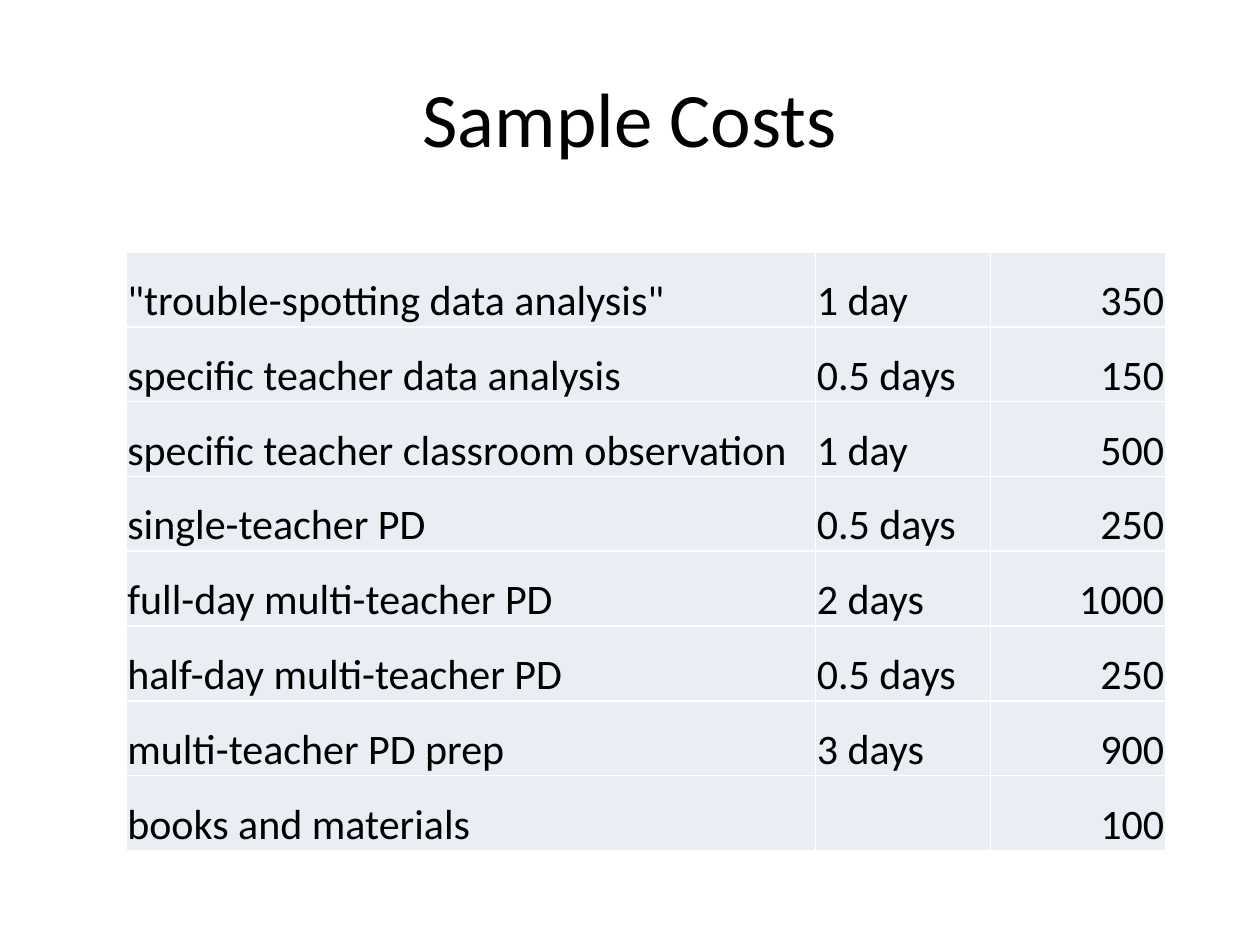
import pptx
import pptx.dml.color
import pptx.enum.text
import pptx.oxml.ns
import pptx.util
from lxml import etree

Pt = pptx.util.Pt
ALIGN = pptx.enum.text.PP_ALIGN
ANCHOR = pptx.enum.text.MSO_ANCHOR

COSTS = [
    ('"trouble-spotting data analysis"', "1 day", "350"),
    ("specific teacher data analysis", "0.5 days", "150"),
    ("specific teacher classroom observation", "1 day", "500"),
    ("single-teacher PD", "0.5 days", "250"),
    ("full-day multi-teacher PD", "2 days", "1000"),
    ("half-day multi-teacher PD", "0.5 days", "250"),
    ("multi-teacher PD prep", "3 days", "900"),
    ("books and materials", "", "100"),
]


def color(hex_string):
    return pptx.dml.color.RGBColor.from_string(hex_string)


def apply_format(target, values):
    for name, value in values.items():
        setattr(target, name, value)


class SlideBuilder:
    font_name = "Calibri"
    text_color = "000000"
    cell_color = "E9EDF4"
    border_color = "FFFFFF"
    border_width = Pt(1)
    cell_format = {
        "vertical_anchor": ANCHOR.BOTTOM,
        "margin_left": Pt(0.75),
        "margin_right": Pt(0.75),
        "margin_top": Pt(0.75),
        "margin_bottom": Pt(0),
    }
    title_format = {
        "word_wrap": True,
        "vertical_anchor": ANCHOR.MIDDLE,
    }

    def __init__(self, slide):
        self.slide = slide

    def add_text(self, paragraph, text, size, alignment):
        paragraph.alignment = alignment
        if text:
            run = paragraph.add_run()
            run.text = text
            apply_format(run.font, {"name": self.font_name, "size": Pt(size)})
            run.font.color.rgb = color(self.text_color)

    def add_title(self, text, left, top, width, height):
        shape = self.slide.shapes.add_textbox(Pt(left), Pt(top), Pt(width), Pt(height))
        apply_format(shape.text_frame, self.title_format)
        self.add_text(shape.text_frame.paragraphs[0], text, 44, ALIGN.CENTER)

    def add_borders(self, cell):
        properties = cell._tc.get_or_add_tcPr()
        qn = pptx.oxml.ns.qn
        for side in ("a:lnL", "a:lnR", "a:lnT", "a:lnB"):
            line = etree.SubElement(properties, qn(side), w=str(self.border_width))
            fill = etree.SubElement(line, qn("a:solidFill"))
            etree.SubElement(fill, qn("a:srgbClr"), val=self.border_color)

    def add_table(self, rows, left, top, column_widths, height):
        frame = self.slide.shapes.add_table(
            len(rows), len(column_widths),
            Pt(left), Pt(top), Pt(sum(column_widths)), Pt(height))
        table = frame.table
        apply_format(table, {"first_row": False, "horz_banding": False})
        for column, width in zip(table.columns, column_widths):
            column.width = Pt(width)
        alignments = (ALIGN.LEFT, ALIGN.LEFT, ALIGN.RIGHT)
        for row, texts in zip(table.rows, rows):
            row.height = Pt(height / len(rows))
            for cell, text, alignment in zip(row.cells, texts, alignments):
                apply_format(cell, self.cell_format)
                self.add_borders(cell)
                cell.fill.solid()
                cell.fill.fore_color.rgb = color(self.cell_color)
                self.add_text(cell.text_frame.paragraphs[0], text, 24, alignment)


def main():
    presentation = pptx.Presentation()
    apply_format(presentation, {"slide_width": Pt(720), "slide_height": Pt(540)})
    builder = SlideBuilder(presentation.slides.add_slide(presentation.slide_layouts[6]))
    builder.add_title("Sample Costs", 36, 21.6, 648, 90)
    builder.add_table(COSTS, 72, 144, (394, 100, 100), 342)
    presentation.save("out.pptx")


if __name__ == "__main__":
    main()
